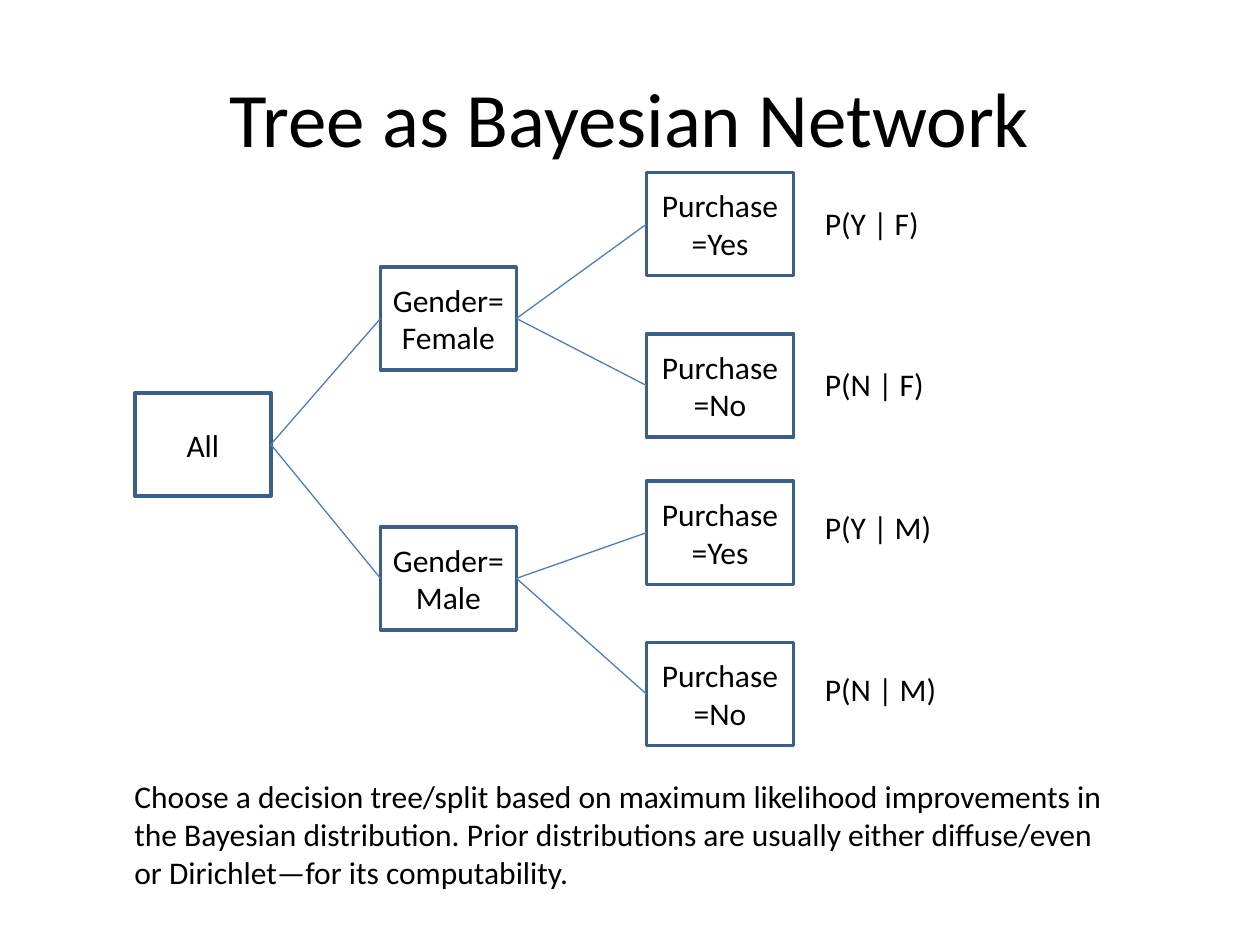
"""Build a slide with a decision tree read as a Bayesian network."""
from lxml import etree
from pptx import Presentation
from pptx import util as u
from pptx.dml.color import RGBColor
from pptx.enum import shapes, text
from pptx.oxml import ns

HUES = {"ink": "000000", "edge": "3A5F8C", "link": "4B7EBC"}
ALIGN = text.PP_ALIGN
ANCHOR = text.MSO_ANCHOR


def write(shape, words, size=18, align=ALIGN.LEFT, anchor=ANCHOR.TOP, wrap=True):
    frame = shape.text_frame
    for key, val in {"word_wrap": wrap, "vertical_anchor": anchor}.items():
        setattr(frame, key, val)
    para = frame.paragraphs[0]
    para.alignment = align
    run = para.add_run()
    run.text = words
    for key, val in {"name": "Calibri", "size": u.Pt(size)}.items():
        setattr(run.font, key, val)
    run.font.color.rgb = RGBColor.from_string(HUES["ink"])


def paint(line, hue, width):
    line.color.rgb = RGBColor.from_string(HUES[hue])
    line.width = u.Pt(width)


deck = Presentation()
deck.slide_width, deck.slide_height = u.Cm(25.4), u.Cm(19.05)
slide = deck.slides.add_slide(deck.slide_layouts[6])
items = slide.shapes

title = items.add_textbox(u.Cm(1.27), u.Cm(0.76), u.Cm(22.86), u.Cm(3.18))
write(title, "Tree as Bayesian Network", 44, ALIGN.CENTER, ANCHOR.MIDDLE)

nodes = {"all": ("All", 2.72, 7.92, 2.74, None)}
for sex, top, first in [("Female", 5.38, 3.48), ("Male", 10.62, 9.7)]:
    nodes[sex] = (f"Gender={sex}", 7.67, top, 2.74, "all")
    for i, reply in enumerate(["Yes", "No"]):
        nodes[sex + reply] = (f"Purchase={reply}", 13.03, first + 3.25 * i, 2.97, sex)

boxes = {}
for name, (words, left, top, width, root) in nodes.items():
    box = items.add_shape(shapes.MSO_SHAPE.RECTANGLE,
                          u.Cm(left), u.Cm(top), u.Cm(width), u.Cm(2.08))
    box.shadow.inherit = False
    box.fill.background()
    paint(box.line, "edge", 2)
    write(box, words, align=ALIGN.CENTER, anchor=ANCHOR.MIDDLE)
    boxes[name] = box

for name, node in nodes.items():
    root = node[-1]
    if root:
        link = items.add_connector(shapes.MSO_CONNECTOR.STRAIGHT, 0, 0, 0, 0)
        link.begin_connect(boxes[root], 3)
        link.end_connect(boxes[name], 1)
        paint(link.line, "link", 0.75)
        etree.SubElement(link.element.spPr, ns.qn("a:effectLst"))

odds = [("P(Y | F)", 3.99, 2.44), ("P(N | F)", 7.24, 2.54),
        ("P(Y | M)", 10.11, 2.69), ("P(N | M)", 13.39, 2.79)]
for words, top, width in odds:
    label = items.add_textbox(u.Cm(16.38), u.Cm(top), u.Cm(width), u.Cm(1.02))
    write(label, words, wrap=False)

note = items.add_textbox(u.Cm(2.46), u.Cm(15.54), u.Cm(20.45), u.Cm(2.57))
write(note, "Choose a decision tree/split based on maximum likelihood improvements in "
            "the Bayesian distribution. Prior distributions are usually either "
            "diffuse/even or Dirichlet—for its computability.")

deck.save("out.pptx")
